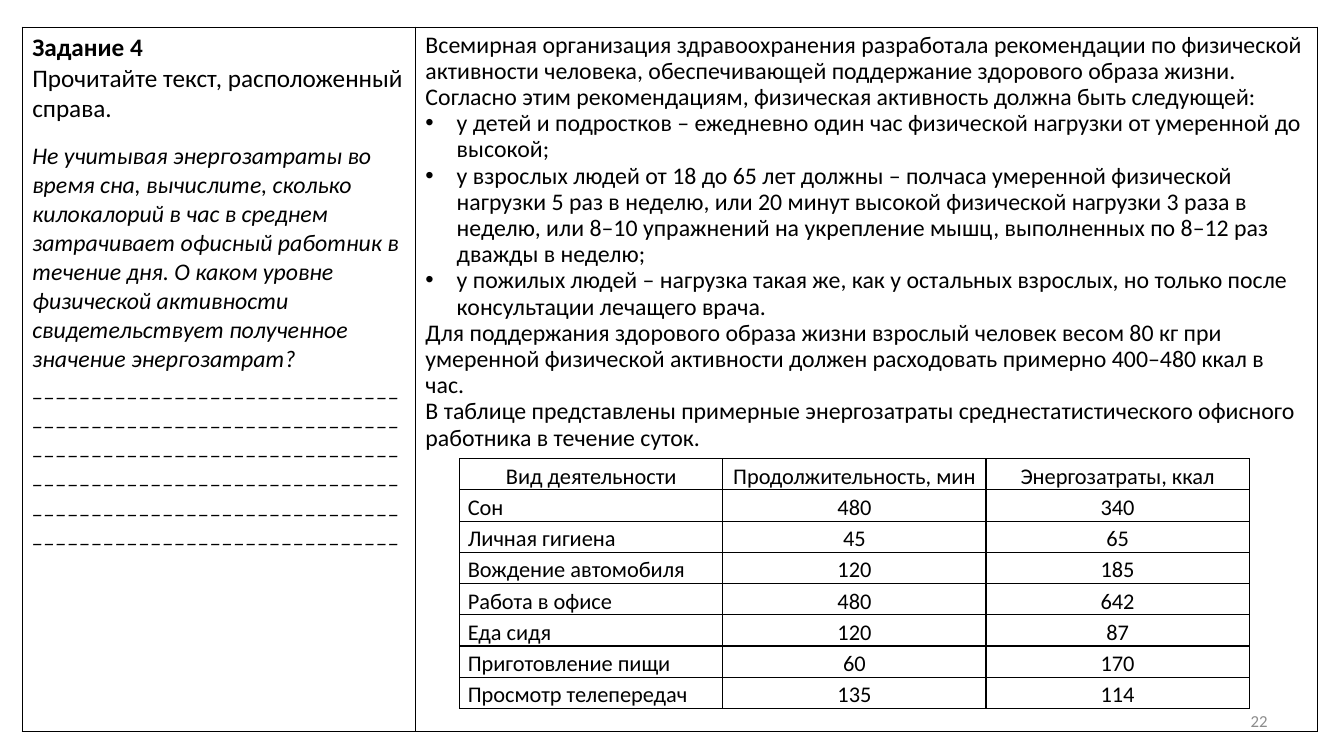
from lxml import etree
from pptx import Presentation
from pptx.dml.color import RGBColor
from pptx.enum.text import MSO_ANCHOR, PP_ALIGN
from pptx.oxml.ns import qn
from pptx.util import Inches, Pt

BLACK = RGBColor(0x00, 0x00, 0x00)
GREY = RGBColor(0x8C, 0x8C, 0x8C)
FONT = "Calibri"
LEFT, CENTER, RIGHT, JUSTIFY = PP_ALIGN.LEFT, PP_ALIGN.CENTER, PP_ALIGN.RIGHT, PP_ALIGN.JUSTIFY
TOP, MIDDLE = MSO_ANCHOR.TOP, MSO_ANCHOR.MIDDLE

# Content
TASK_TITLE = "Задание 4"
TASK_INTRO = "Прочитайте текст, расположенный справа."
QUESTION = (
    "Не учитывая энергозатраты во время сна, вычислите, сколько килокалорий в час "
    "в среднем затрачивает офисный работник в течение дня. О каком уровне физической "
    "активности свидетельствует полученное значение энергозатрат?"
)
ANSWER_LINES, MARKS_PER_LINE = 6, 31
READING = [  # (bulleted, text)
    (False, "Всемирная организация здравоохранения разработала рекомендации по физической "
            "активности человека, обеспечивающей поддержание здорового образа жизни. "
            "Согласно этим рекомендациям, физическая активность должна быть следующей:"),
    (True, "у детей и подростков – ежедневно один час физической нагрузки от умеренной до высокой;"),
    (True, "у взрослых людей от 18 до 65 лет должны – полчаса умеренной физической нагрузки "
           "5 раз в неделю, или 20 минут высокой физической нагрузки 3 раза в неделю, "
           "или 8–10 упражнений на укрепление мышц, выполненных по 8–12 раз дважды в неделю;"),
    (True, "у пожилых людей – нагрузка такая же, как у остальных взрослых, "
           "но только после консультации лечащего врача."),
    (False, "Для поддержания здорового образа жизни взрослый человек весом 80 кг при умеренной "
            "физической активности должен расходовать примерно 400–480 ккал в час."),
    (False, "В таблице представлены примерные энергозатраты среднестатистического офисного "
            "работника в течение суток."),
]
ENERGY = [
    ("Вид деятельности", "Продолжительность, мин", "Энергозатраты, ккал"),
    ("Сон", "480", "340"),
    ("Личная гигиена", "45", "65"),
    ("Вождение автомобиля", "120", "185"),
    ("Работа в офисе", "480", "642"),
    ("Еда сидя", "120", "87"),
    ("Приготовление пищи", "60", "170"),
    ("Просмотр телепередач", "135", "114"),
]
PAGE_NUMBER = "22"

# Layout, in inches
PAGE_SIZE = (13.33, 7.5)
FRAME_AT, FRAME_COLUMNS, FRAME_HEIGHT = (0.22, 0.27), (3.9, 8.95), 6.99
ENERGY_AT, ENERGY_COLUMNS, ENERGY_ROW = (4.56, 4.55), (2.61, 2.61, 2.61), 0.31
NUMBER_BOX = (9.56, 6.95, 3.11, 0.4)
BULLET_INDENT, NAME_INDENT = 0.31, 0.08


def add_grid(page, at, columns, row_height, row_count):
    """Add a plain table with thin black borders."""
    frame = page.shapes.add_table(
        row_count, len(columns), Inches(at[0]), Inches(at[1]),
        Inches(sum(columns)), Inches(row_height * row_count))
    table = frame.table
    table.first_row = table.horz_banding = False
    for column, width in zip(table.columns, columns):
        column.width = Inches(width)
    for row in table.rows:
        row.height = Inches(row_height)
    for cell in table.iter_cells():
        cell.fill.background()
        properties = cell._tc.get_or_add_tcPr()
        for place, side in enumerate(("lnL", "lnR", "lnT", "lnB")):
            border = etree.Element(qn("a:" + side), w=str(Pt(1)))
            fill = etree.SubElement(border, qn("a:solidFill"))
            etree.SubElement(fill, qn("a:srgbClr"), val=str(BLACK))
            properties.insert(place, border)
    return table


def add_text(para, text, size, color=BLACK, bold=False, italic=False, align=LEFT, spacing=1.0):
    para.alignment = align
    para.line_spacing = spacing
    span = para.add_run()
    span.text = text
    font = span.font
    font.name, font.size, font.bold, font.italic = FONT, Pt(size), bold, italic
    font.color.rgb = color


def paragraphs(text_frame, count):
    """Return the first paragraph followed by newly added ones."""
    return [text_frame.paragraphs[0]] + [text_frame.add_paragraph() for _ in range(count - 1)]


def add_bullet(para):
    properties = para._p.get_or_add_pPr()
    properties.set("marL", str(Inches(BULLET_INDENT)))
    properties.set("indent", str(-Inches(BULLET_INDENT)))
    etree.SubElement(properties, qn("a:buFont"), typeface="Arial")
    etree.SubElement(properties, qn("a:buChar"), char="•")


def fill_task(cell):
    title, intro, question, answer = paragraphs(cell.text_frame, 4)
    add_text(title, TASK_TITLE, 18, bold=True)
    add_text(intro, TASK_INTRO, 18)
    add_text(question, QUESTION, 17, italic=True)
    question.space_before = Pt(12)
    add_text(answer, "_" * (ANSWER_LINES * MARKS_PER_LINE), 17, italic=True)


def fill_reading(cell):
    for para, (bulleted, text) in zip(paragraphs(cell.text_frame, len(READING)), READING):
        add_text(para, text, 17, spacing=0.9)
        if bulleted:
            add_bullet(para)


def fill_energy(table):
    for row, values in enumerate(ENERGY):
        for column, value in enumerate(values):
            cell = table.cell(row, column)
            cell.margin_left = cell.margin_right = cell.margin_top = cell.margin_bottom = 0
            cell.vertical_anchor = TOP if row else MIDDLE
            para = cell.text_frame.paragraphs[0]
            is_name = row > 0 and column == 0
            add_text(para, value, 16, align=JUSTIFY if is_name else CENTER, spacing=1.15)
            if is_name:
                para._p.get_or_add_pPr().set("marL", str(Inches(NAME_INDENT)))


def main():
    deck = Presentation()
    deck.slide_width, deck.slide_height = (Inches(side) for side in PAGE_SIZE)
    page = deck.slides.add_slide(deck.slide_layouts[6])

    # Task on the left, reading text on the right
    frame = add_grid(page, FRAME_AT, FRAME_COLUMNS, FRAME_HEIGHT, 1)
    fill_task(frame.cell(0, 0))
    fill_reading(frame.cell(0, 1))

    # Page number
    box = page.shapes.add_textbox(*(Inches(length) for length in NUMBER_BOX))
    box.text_frame.word_wrap = True
    box.text_frame.vertical_anchor = MIDDLE
    add_text(box.text_frame.paragraphs[0], PAGE_NUMBER, 12, GREY, align=RIGHT)

    # Energy table
    fill_energy(add_grid(page, ENERGY_AT, ENERGY_COLUMNS, ENERGY_ROW, len(ENERGY)))

    deck.save("out.pptx")


if __name__ == "__main__":
    main()
